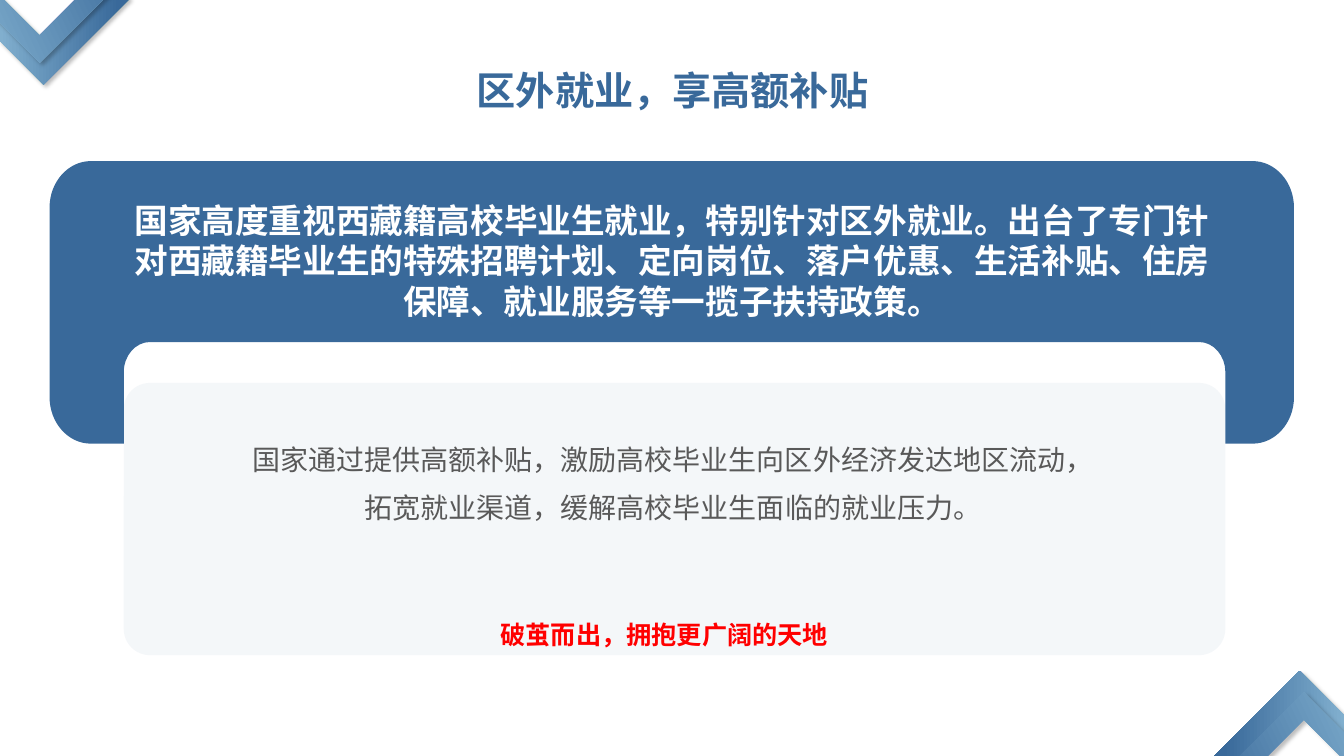
from lxml import etree
from pptx import Presentation
from pptx.dml.color import RGBColor
from pptx.enum import shapes, text
from pptx.oxml import ns
from pptx.util import Cm, Pt

CJK = "Noto Sans CJK SC"
CURVE = 0.55
COLORS = {
    "blue": "39699A",
    "sky": "89B7D4",
    "white": "FFFFFF",
    "gray": "595959",
    "red": "FF0000",
    "black": "000000",
}
CUT_CHEVRON = [(0, 2.06), (3.07, 2.06), (3.07, 1.57),
               (0.48, 1.57), (0.48, 0), (0, 0.49)]
FULL_CHEVRON = [(0, 3.07), (3.07, 3.07), (3.07, 2.58),
                (0.48, 2.58), (0.48, 0), (0, 0)]


def rgb(name):
    return RGBColor.from_string(COLORS[name])


def add_child(parent, tag, **attrs):
    return etree.SubElement(parent, ns.qn(tag), {k: str(v) for k, v in attrs.items()})


def add_outline(s, points, left=0, top=0):
    (x, y), *rest = [(Cm(left + x), Cm(top + y)) for x, y in points]
    builder = s.shapes.build_freeform(x, y)
    builder.add_line_segments(rest)
    sp = builder.convert_to_shape()
    sp.line.fill.background()
    sp.shadow.inherit = False
    return sp


def add_chevron(s, points, left, top, angle, flipped):
    sp = add_outline(s, points, left, top)
    sp.rotation = 315
    if flipped:
        xfrm = sp._element.spPr.find(ns.qn("a:xfrm"))
        xfrm.set("flipH", "1")
        xfrm.set("flipV", "1")
    sp.fill.gradient()
    sp.fill.gradient_angle = 360 - angle
    for stop, color, position in zip(sp.fill.gradient_stops, ("sky", "blue"), (0, 0.93)):
        stop.color.rgb = rgb(color)
        stop.position = position
    effects = sp._element.spPr.find(ns.qn("a:effectLst"))
    shadow = add_child(effects, "a:outerShdw", blurRad=Pt(3), dist=Pt(3),
                       dir=45 * 60000, algn="tl", rotWithShape=0)
    color = add_child(shadow, "a:srgbClr", val=COLORS["black"])
    add_child(color, "a:alpha", val=25000)


def round_diagonals(sp):
    nodes = list(sp._element.iter(ns.qn("a:moveTo"), ns.qn("a:lnTo")))
    ends = [(int(n[0].get("x")), int(n[0].get("y"))) for n in nodes]
    horizontal = True
    for node, (x0, y0), (x1, y1) in zip(nodes[1:], ends, ends[1:]):
        if x0 == x1 or y0 == y1:
            horizontal = y0 == y1
            continue
        cx, cy = (x1, y0) if horizontal else (x0, y1)
        node.tag = ns.qn("a:cubicBezTo")
        for i, (x, y) in enumerate(((x0, y0), (x1, y1))):
            pt = etree.Element(ns.qn("a:pt"), x=str(round(x + CURVE * (cx - x))),
                               y=str(round(y + CURVE * (cy - y))))
            node.insert(i, pt)


def add_band(s):
    left, top, right, bottom, rx, ry = 1.25, 4.06, 32.61, 11.18, 1.04, 1.17
    notch_left, notch_right, notch_top, nx, ny = 3.12, 30.88, 8.62, 0.66, 0.76
    sp = add_outline(s, [
        (left + rx, top), (right - rx, top),
        (right, top + ry), (right, bottom - ry),
        (right - rx, bottom), (notch_right, bottom),
        (notch_right, notch_top + ny), (notch_right - nx, notch_top),
        (notch_left + nx, notch_top), (notch_left, notch_top + ny),
        (notch_left, bottom), (left + rx, bottom),
        (left, bottom - ry), (left, top + ry), (left + rx, top),
    ])
    round_diagonals(sp)
    sp.fill.solid()
    sp.fill.fore_color.rgb = rgb("blue")


def add_panel(s):
    sp = s.shapes.add_shape(shapes.MSO_SHAPE.ROUNDED_RECTANGLE,
                            Cm(3.12), Cm(9.65), Cm(27.76), Cm(6.86))
    sp.adjustments[0] = 0.096
    sp.shadow.inherit = False
    sp.line.fill.background()
    sp.fill.solid()
    sp.fill.fore_color.rgb = rgb("blue")
    color = sp._element.spPr.find(ns.qn("a:solidFill"))[0]
    add_child(color, "a:alpha", val=5000)


def add_text(s, content, *, box, size, color, bold=False, font=CJK,
             spacing=None, anchor=text.MSO_ANCHOR.TOP):
    tf = s.shapes.add_textbox(*(Cm(v) for v in box)).text_frame
    tf.word_wrap = True
    tf.vertical_anchor = anchor
    for i, line in enumerate(content.split("\n")):
        p = tf.add_paragraph() if i else tf.paragraphs[0]
        p.alignment = text.PP_ALIGN.CENTER
        p.line_spacing = spacing
        r = p.add_run()
        r.text = line
        r.font.size = Pt(size)
        r.font.bold = bold
        r.font.name = font
        r.font.color.rgb = rgb(color)
        add_child(r._r.get_or_add_rPr(), "a:ea", typeface=CJK)


def main():
    prs = Presentation()
    prs.slide_width, prs.slide_height = Cm(33.87), Cm(19.05)
    s = prs.slides.add_slide(prs.slide_layouts[6])
    add_chevron(s, CUT_CHEVRON, -0.08, -0.71, angle=45, flipped=False)
    add_chevron(s, FULL_CHEVRON, -0.53, -2.13, angle=20, flipped=False)
    add_chevron(s, CUT_CHEVRON, 30.86, 17.68, angle=45, flipped=True)
    add_chevron(s, FULL_CHEVRON, 31.32, 18.08, angle=20, flipped=True)
    add_text(s, "区外就业，享高额补贴", box=(1.8, 1.32, 30.3, 1.9), size=28,
             color="blue", bold=True, anchor=text.MSO_ANCHOR.MIDDLE)
    add_band(s)
    add_panel(s)
    add_text(s, "国家高度重视西藏籍高校毕业生就业，特别针对区外就业。"
                "出台了专门针对西藏籍毕业生的特殊招聘计划、定向岗位、落户优惠、"
                "生活补贴、住房保障、就业服务等一揽子扶持政策。",
             box=(2.98, 4.91, 27.91, 3.35), size=24, color="white", bold=True)
    add_text(s, "国家通过提供高额补贴，激励高校毕业生向区外经济发达地区流动，\n"
                "拓宽就业渠道，缓解高校毕业生面临的就业压力。",
             box=(4.96, 10.7, 24, 2.87), size=20, color="gray", spacing=1.4)
    add_text(s, "破茧而出，拥抱更广阔的天地", box=(11.1, 15.49, 11.28, 1.02),
             size=18, color="red", bold=True, font="Calibri")
    prs.save("out.pptx")


if __name__ == "__main__":
    main()
